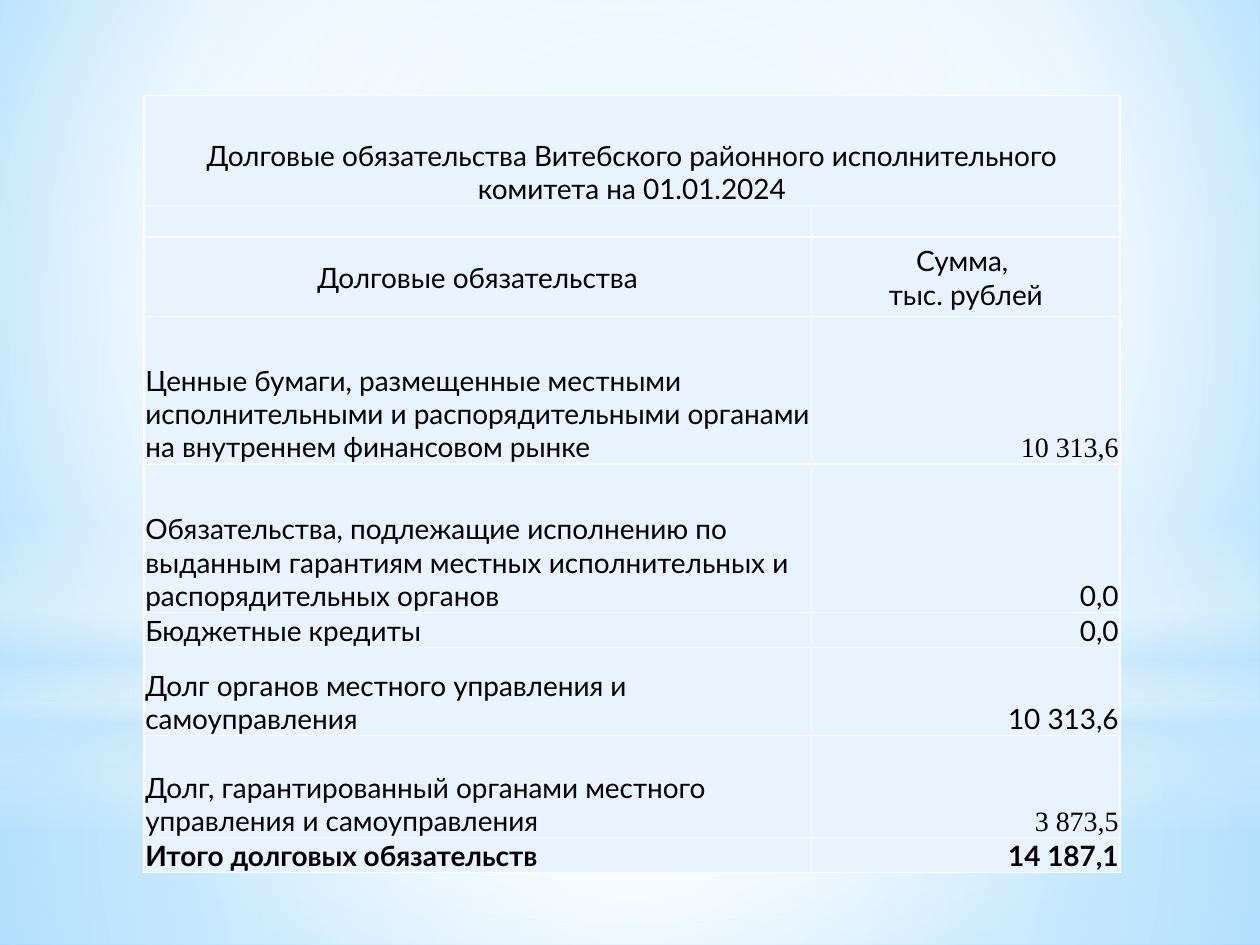
from lxml import etree
from pptx import Presentation
from pptx.dml.color import RGBColor
from pptx.enum.shapes import MSO_SHAPE
from pptx.enum.text import MSO_ANCHOR, PP_ALIGN
from pptx.oxml.ns import qn
from pptx.util import Cm, Pt

RECTANGLE, OVAL = MSO_SHAPE.RECTANGLE, MSO_SHAPE.OVAL
LEFT, CENTER, RIGHT = PP_ALIGN.LEFT, PP_ALIGN.CENTER, PP_ALIGN.RIGHT
MIDDLE, BOTTOM = MSO_ANCHOR.MIDDLE, MSO_ANCHOR.BOTTOM

WHITE = RGBColor(0xFF, 0xFF, 0xFF)
BLACK = RGBColor(0x00, 0x00, 0x00)
CELL_BLUE = RGBColor(0xE8, 0xF3, 0xFF)
HAZE_BLUE = RGBColor(0xC6, 0xE7, 0xFC)
SKY_BLUE = RGBColor(0xB0, 0xE0, 0xFF)
DEEP_BLUE = RGBColor(0x6B, 0xC5, 0xFF)

BODY_FONT, FIGURE_FONT = "Lato", "Times New Roman"
MIDPOINT = (50, 50, 50, 50)

# Outline, (left, top, width, height) in cm, stops (position, colour, opacity), focus
HAZE_LAYERS = [
    (RECTANGLE, (0, 14.17, 25.4, 4.88),
     [(0, WHITE, 91), (37, WHITE, 76), (100, HAZE_BLUE, 79)], MIDPOINT),
    (RECTANGLE, (0, 0, 25.4, 14.17),
     [(0, WHITE, 89), (48, WHITE, 62), (100, HAZE_BLUE, 79)], MIDPOINT),
    (RECTANGLE, (0, 10.46, 25.4, 6.35),
     [(0, WHITE, 0), (29, WHITE, 30), (45, HAZE_BLUE, 40), (55, WHITE, 26),
      (65, HAZE_BLUE, 60), (100, WHITE, 0)], None),
    (OVAL, (0, 4.45, 25.4, 14.17), [(0, WHITE, 100), (56, WHITE, 0)], MIDPOINT),
]

TITLE = "Долговые обязательства Витебского районного исполнительного комитета на 01.01.2024"
HEADINGS = ["Долговые обязательства", "Сумма, \nтыс. рублей"]
# Obligation, amount, font of the amount
DEBTS = [
    ("Ценные бумаги, размещенные местными исполнительными и распорядительными "
     "органами на внутреннем финансовом рынке", "10 313,6", FIGURE_FONT),
    ("Обязательства, подлежащие исполнению по выданным гарантиям местных "
     "исполнительных и распорядительных органов", "0,0", BODY_FONT),
    ("Бюджетные кредиты", "0,0", BODY_FONT),
    ("Долг органов местного управления и самоуправления", "10 313,6", BODY_FONT),
    ("Долг, гарантированный органами местного управления и самоуправления",
     "3 873,5", FIGURE_FONT),
    ("Итого долговых обязательств", "14 187,1", BODY_FONT),
]
COLUMN_WIDTHS = [13.46, 6.22]
ROW_HEIGHTS = [2.21, 0.64, 1.6, 2.97, 3, 0.67, 1.77, 2.06, 0.67]


def set_gradient(owner, stops, focus):
    """Replace the gradient below owner: circular around focus, or vertical."""
    gradient = owner.find(".//" + qn("a:gradFill"))
    for child in list(gradient):
        gradient.remove(child)
    stop_list = etree.SubElement(gradient, qn("a:gsLst"))
    for position, color, opacity in stops:
        stop = etree.SubElement(stop_list, qn("a:gs"), pos=str(position * 1000))
        tint = etree.SubElement(stop, qn("a:srgbClr"), val=str(color))
        if opacity < 100:
            etree.SubElement(tint, qn("a:alpha"), val=str(opacity * 1000))
    if focus is None:
        etree.SubElement(gradient, qn("a:lin"), ang="5400000", scaled="0")
        return
    circle = etree.SubElement(gradient, qn("a:path"), path="circle")
    sides = {side: str(share * 1000) for side, share in zip("ltrb", focus)}
    etree.SubElement(circle, qn("a:fillToRect"), **sides)


def add_backdrop(page):
    page.background.fill.gradient()
    sky = [(0, SKY_BLUE, 100), (60, WHITE, 100), (100, DEEP_BLUE, 100)]
    set_gradient(page.background._cSld, sky, (20, 10, 20, 60))
    for outline, box, stops, focus in HAZE_LAYERS:
        layer = page.shapes.add_shape(outline, *map(Cm, box))
        layer.shadow.inherit = False
        layer.line.fill.background()
        layer.fill.gradient()
        set_gradient(layer._element, stops, focus)


def style_cell(cell):
    cell.fill.solid()
    cell.fill.fore_color.rgb = CELL_BLUE
    cell.margin_left = cell.margin_right = cell.margin_top = Cm(0.03)
    cell.margin_bottom = 0
    properties = cell._tc.get_or_add_tcPr()
    for index, side in enumerate(("lnL", "lnR", "lnT", "lnB")):
        border = etree.Element(qn("a:" + side), w=str(Pt(1)))
        solid = etree.SubElement(border, qn("a:solidFill"))
        etree.SubElement(solid, qn("a:srgbClr"), val=str(WHITE))
        properties.insert(index, border)


def write_cell(cell, text, align, anchor=BOTTOM, font=BODY_FONT, bold=False):
    cell.vertical_anchor = anchor
    para = cell.text_frame.paragraphs[0]
    para.alignment = align
    for index, line in enumerate(text.split("\n")):
        if index:
            para.add_line_break()
        span = para.add_run()
        span.text = line
        span.font.name = font
        span.font.size = Pt(16)
        span.font.bold = bold
        span.font.color.rgb = BLACK


def add_debt_table(page, left, top):
    frame = page.shapes.add_table(
        len(ROW_HEIGHTS), len(COLUMN_WIDTHS), Cm(left), Cm(top),
        Cm(sum(COLUMN_WIDTHS)), Cm(sum(ROW_HEIGHTS)))
    table = frame.table
    table.first_row = table.horz_banding = False
    for column, width in zip(table.columns, COLUMN_WIDTHS):
        column.width = Cm(width)
    for row, height in zip(table.rows, ROW_HEIGHTS):
        row.height = Cm(height)
        for cell in row.cells:
            style_cell(cell)

    table.cell(0, 0).merge(table.cell(0, 1))
    write_cell(table.cell(0, 0), TITLE, CENTER)
    for column, heading in enumerate(HEADINGS):
        spacer = table.cell(1, column).text_frame.paragraphs[0]
        etree.SubElement(spacer._p, qn("a:endParaRPr"), sz="1000")
        write_cell(table.cell(2, column), heading, CENTER, MIDDLE)
    for row, (name, amount, font) in enumerate(DEBTS, start=3):
        is_total = row == len(ROW_HEIGHTS) - 1
        write_cell(table.cell(row, 0), name, LEFT, bold=is_total)
        write_cell(table.cell(row, 1), amount, RIGHT, font=font, bold=is_total)


def main():
    deck = Presentation()
    deck.slide_width, deck.slide_height = Cm(25.4), Cm(19.05)
    page = deck.slides.add_slide(deck.slide_layouts[6])
    add_backdrop(page)
    add_debt_table(page, 2.9, 1.93)
    deck.save("out.pptx")


if __name__ == "__main__":
    main()
